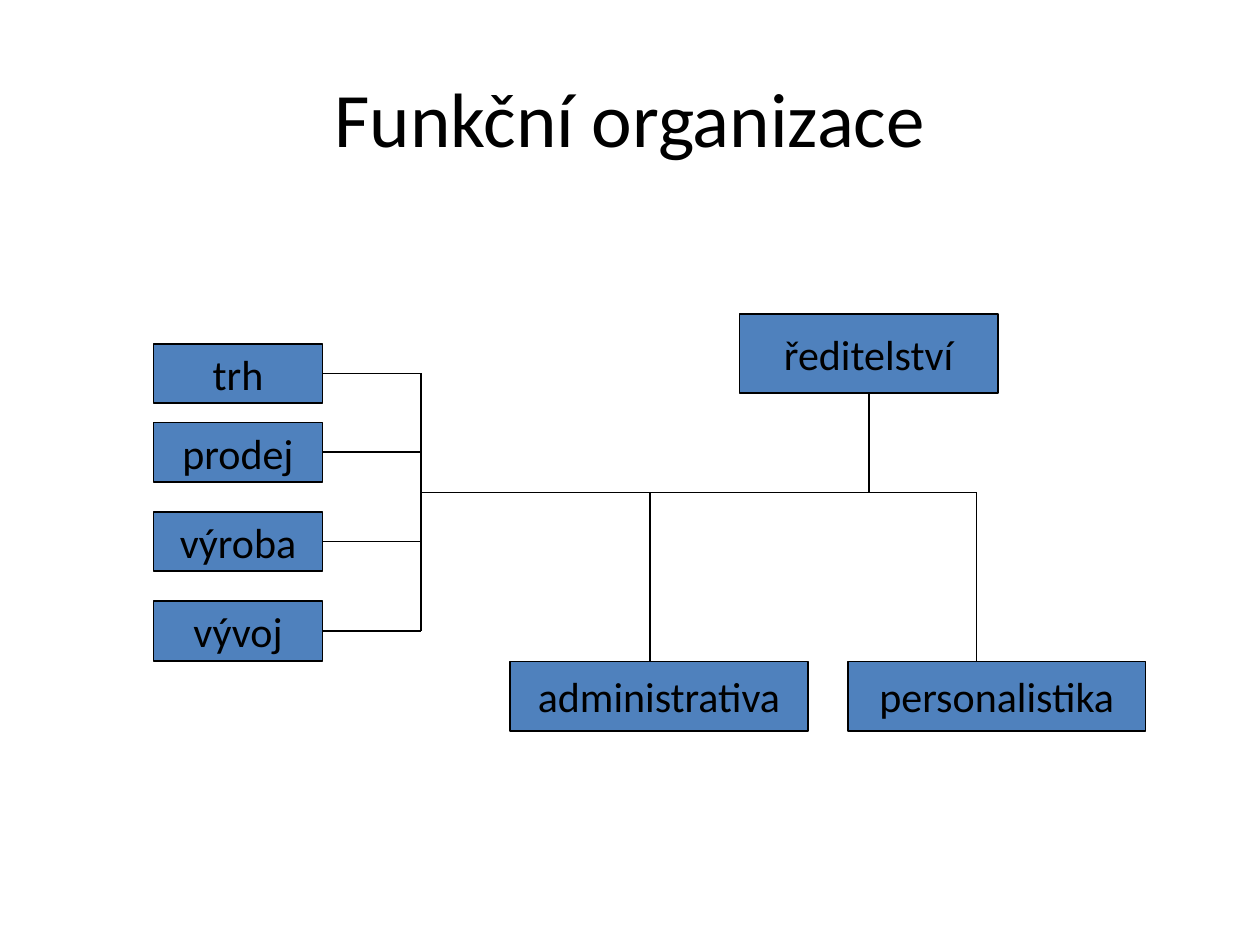
from lxml.etree import SubElement
from pptx import Presentation
from pptx.dml.color import RGBColor
from pptx.enum.shapes import MSO_CONNECTOR as CONN, MSO_SHAPE as SHAPE
from pptx.enum.text import MSO_ANCHOR as ANCHOR, PP_ALIGN as ALIGN
from pptx.oxml.ns import qn
from pptx.util import Pt

# Content: boxes as left, top, width, height in points
TITLE = "Funkční organizace"
DIRECTORATE = ("ředitelství", (422.6, 179.3, 147.6, 45.4))
DEPARTMENTS = [("trh", 196.4), ("prodej", 241.4), ("výroba", 292.4), ("vývoj", 343.6)]
STAFF = [("administrativa", 291.6, 371.4), ("personalistika", 484.6, 558)]

COLORS = {"box": "4F81BD", "ink": "000000"}
DEPT_LEFT, DEPT_W, DEPT_H = 87.8, 96.5, 34
STAFF_TOP, STAFF_W, STAFF_H = 378, 170, 39.6
TRUNK_X, BUS_Y = 240.6, 281.4

BOTTOM, RIGHT = 2, 3


def rgb(name):
    return RGBColor.from_string(COLORS[name])


def write(sp, text, size=24, color="ink", font="Calibri", wrap=False):
    tf = sp.text_frame
    tf.word_wrap = wrap
    tf.vertical_anchor = ANCHOR.MIDDLE
    p = tf.paragraphs[0]
    p.alignment = ALIGN.CENTER
    r = p.add_run()
    r.text = text
    r.font.size, r.font.name = Pt(size), font
    r.font.color.rgb = rgb(color)


def add_box(s, text, box):
    sp = s.shapes.add_shape(SHAPE.RECTANGLE, *map(Pt, box))
    sp.shadow.inherit = False
    sp.fill.solid()
    sp.fill.fore_color.rgb = rgb("box")
    sp.line.color.rgb = rgb("ink")
    sp.line.width = Pt(1)
    write(sp, text)
    return sp


def add_line(s, x1, y1, x2, y2, start=None):
    line = s.shapes.add_connector(CONN.STRAIGHT, *map(Pt, (x1, y1, x2, y2)))
    line.line.color.rgb = rgb("ink")
    line.line.width = Pt(1)
    SubElement(line._element.spPr, qn("a:effectLst"))
    if start:
        line.begin_connect(*start)


prs = Presentation()
prs.slide_width, prs.slide_height = Pt(720), Pt(540)
s = prs.slides.add_slide(prs.slide_layouts[5])

# Title
title = s.shapes.title
title.left, title.top, title.width, title.height = map(Pt, (36, 21.6, 648, 90))
write(title, TITLE, size=44, wrap=True)

# Departments, each joined to the trunk
for name, top in DEPARTMENTS:
    sp = add_box(s, name, (DEPT_LEFT, top, DEPT_W, DEPT_H))
    mid = top + DEPT_H / 2
    add_line(s, DEPT_LEFT + DEPT_W, mid, TRUNK_X, mid, start=(sp, RIGHT))

# Trunk and bus
first, last = (DEPARTMENTS[i][1] + DEPT_H / 2 for i in (0, -1))
add_line(s, TRUNK_X, first, TRUNK_X, last)
add_line(s, TRUNK_X, BUS_Y, STAFF[-1][2], BUS_Y)

# Directorate above the bus
name, box = DIRECTORATE
left, top, width, height = box
sp = add_box(s, name, box)
mid = left + width / 2
add_line(s, mid, top + height, mid, BUS_Y, start=(sp, BOTTOM))

# Staff units below the bus, with stems off centre
for name, left, stem_x in STAFF:
    add_line(s, stem_x, BUS_Y, stem_x, STAFF_TOP)
    add_box(s, name, (left, STAFF_TOP, STAFF_W, STAFF_H))

prs.save("out.pptx")
